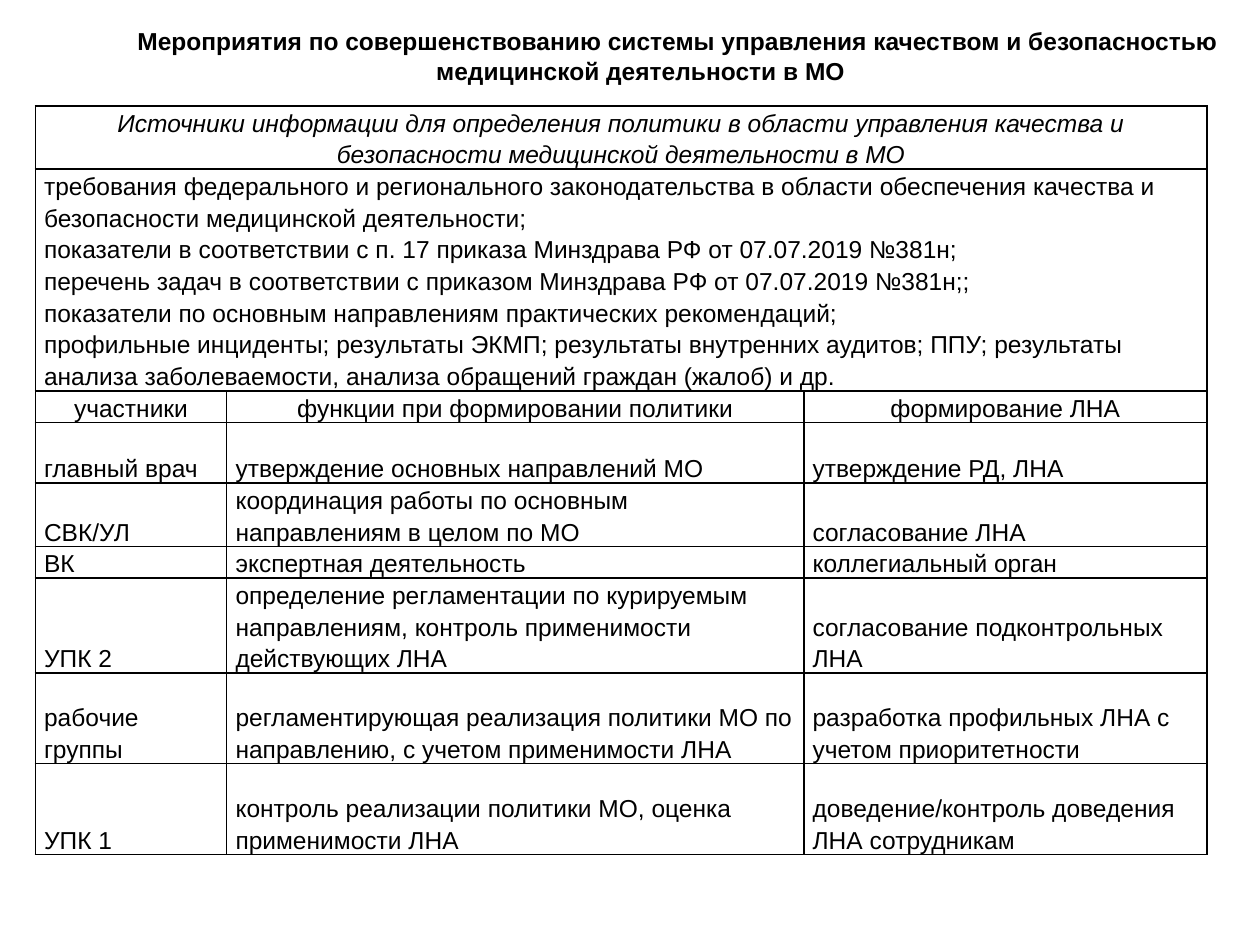
from lxml import etree
from pptx import Presentation
from pptx.dml.color import RGBColor
from pptx.enum import text
from pptx.oxml import ns
from pptx.util import Inches, Pt

BLACK = RGBColor(0, 0, 0)
FONT = "Arial"
TITLE = (
    "Мероприятия по совершенствованию системы управления качеством "
    "и безопасностью медицинской деятельности в МО"
)
SOURCES_HEADING = (
    "Источники информации для определения политики в области управления "
    "качества и безопасности медицинской деятельности в МО"
)
SOURCES = [
    "требования федерального и регионального законодательства в области "
    "обеспечения качества и безопасности медицинской деятельности;\n"
    "показатели в соответствии с п. 17 приказа Минздрава РФ от 07.07.2019 №381н;",
    "перечень задач в соответствии с приказом Минздрава РФ от 07.07.2019 №381н;;",
    "показатели по основным направлениям практических рекомендаций;",
    "профильные инциденты; результаты ЭКМП; результаты внутренних аудитов; ППУ; "
    "результаты анализа заболеваемости, анализа обращений граждан (жалоб) и др.",
]
HEADINGS = ("участники", "функции при формировании политики", "формирование ЛНА")
PARTICIPANTS = [
    ("главный врач", "утверждение основных направлений МО", "утверждение РД, ЛНА"),
    ("СВК/УЛ", "координация работы по основным направлениям в целом по МО", "согласование ЛНА"),
    ("ВК", "экспертная деятельность", "коллегиальный орган"),
    (
        "УПК 2",
        "определение регламентации по курируемым направлениям, "
        "контроль применимости действующих ЛНА",
        "согласование подконтрольных ЛНА",
    ),
    (
        "рабочие группы",
        "регламентирующая реализация политики МО по направлению, с учетом применимости ЛНА",
        "разработка профильных ЛНА с учетом приоритетности",
    ),
    (
        "УПК 1",
        "контроль реализации политики МО, оценка применимости ЛНА",
        "доведение/контроль доведения ЛНА сотрудникам",
    ),
]
COLUMN_WIDTHS = (1.52, 4.58, 3.2)
ROW_HEIGHTS = (0.48, 1.73, 0.24, 0.48, 0.48, 0.24, 0.72, 0.72, 0.72)


def add_run(paragraph, content, bold=False, italic=False):
    """Add one run in the common slide font."""
    run = paragraph.add_run()
    run.text = content
    run.font.name = FONT
    run.font.size = Pt(14)
    run.font.bold = bold
    run.font.italic = italic
    run.font.color.rgb = BLACK


def add_title(slide):
    """Add the centred bold title with its first-line indent."""
    frame = slide.shapes.add_textbox(
        Inches(0.2), Inches(0.14), Inches(9.77), Inches(0.88)
    ).text_frame
    frame.word_wrap = True
    frame.vertical_anchor = text.MSO_ANCHOR.TOP
    frame.margin_top = Inches(0.07)
    paragraph = frame.paragraphs[0]
    paragraph.alignment = text.PP_ALIGN.CENTER
    paragraph._p.get_or_add_pPr().set("indent", str(Inches(0.59)))
    add_run(paragraph, TITLE, bold=True)


def style_cell(cell):
    """Give a cell thin black borders, no fill and tight margins."""
    properties = cell._tc.get_or_add_tcPr()
    for side in ("lnL", "lnR", "lnT", "lnB"):
        line = etree.SubElement(properties, ns.qn(f"a:{side}"), w=str(Pt(1)))
        fill = etree.SubElement(line, ns.qn("a:solidFill"))
        etree.SubElement(fill, ns.qn("a:srgbClr"), val=str(BLACK))
    cell.fill.background()
    cell.vertical_anchor = text.MSO_ANCHOR.BOTTOM
    cell.margin_left = cell.margin_right = Inches(0.07)
    cell.margin_top = cell.margin_bottom = 0


def write_cell(cell, contents, centered=False, italic=False):
    """Write one paragraph per string, with line breaks at newlines."""
    frame = cell.text_frame
    for index, content in enumerate(contents):
        paragraph = frame.add_paragraph() if index else frame.paragraphs[0]
        paragraph.line_spacing = 1.15
        paragraph.alignment = text.PP_ALIGN.CENTER if centered else text.PP_ALIGN.LEFT
        for number, part in enumerate(content.split("\n")):
            if number:
                paragraph.add_line_break()
            add_run(paragraph, part, italic=italic)


def add_policy_table(slide):
    """Add the table of information sources and participants."""
    table = slide.shapes.add_table(
        len(ROW_HEIGHTS), len(COLUMN_WIDTHS), Inches(0.28), Inches(0.84),
        Inches(sum(COLUMN_WIDTHS)), Inches(sum(ROW_HEIGHTS)),
    ).table
    table.first_row = table.horz_banding = False
    for column, width in zip(table.columns, COLUMN_WIDTHS):
        column.width = Inches(width)
    for row, height in zip(table.rows, ROW_HEIGHTS):
        row.height = Inches(height)
    for cell in table.iter_cells():
        style_cell(cell)
    for row_index in range(2):
        table.cell(row_index, 0).merge(table.cell(row_index, len(COLUMN_WIDTHS) - 1))
    write_cell(table.cell(0, 0), [SOURCES_HEADING], centered=True, italic=True)
    write_cell(table.cell(1, 0), SOURCES)
    for row_index, values in enumerate([HEADINGS, *PARTICIPANTS], start=2):
        for column_index, value in enumerate(values):
            write_cell(table.cell(row_index, column_index), [value], centered=row_index == 2)


def main():
    """Build and save the slide."""
    presentation = Presentation()
    presentation.slide_width = Inches(10)
    presentation.slide_height = Inches(7.5)
    slide = presentation.slides.add_slide(presentation.slide_layouts[6])
    add_policy_table(slide)
    add_title(slide)
    presentation.save("out.pptx")


if __name__ == "__main__":
    main()
